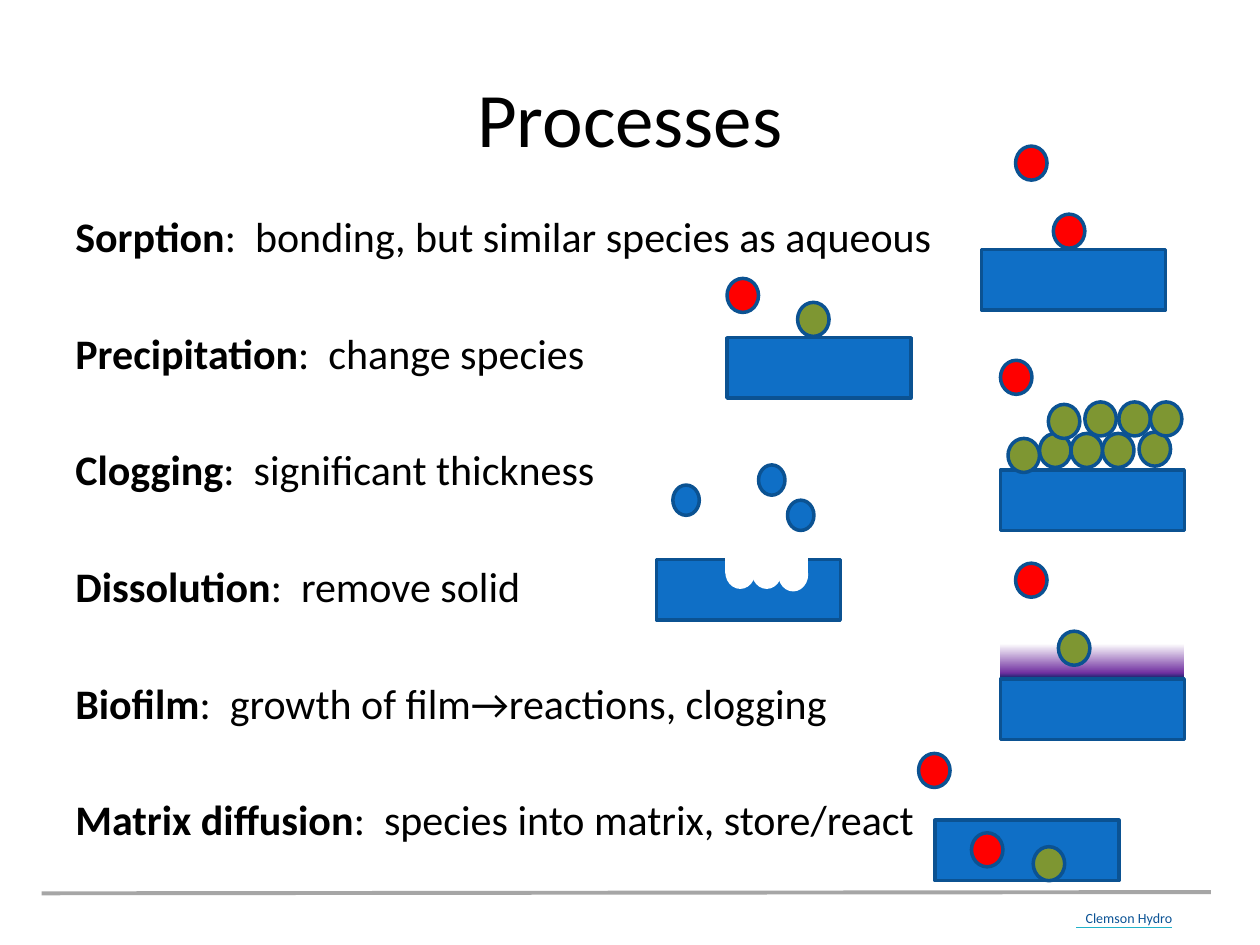
import copy

import pptx
import pptx.dml.color
import pptx.enum.shapes
import pptx.enum.text
import pptx.oxml.ns
import pptx.oxml.xmlchemy
import pptx.util

Inches, Pt = pptx.util.Inches, pptx.util.Pt
RGB = pptx.dml.color.RGBColor
SHAPE = pptx.enum.shapes.MSO_SHAPE
ALIGN = pptx.enum.text.PP_ALIGN
ANCHOR = pptx.enum.text.MSO_ANCHOR

BLACK = RGB(0x00, 0x00, 0x00)
WHITE = RGB(0xFF, 0xFF, 0xFF)
RED = RGB(0xFF, 0x00, 0x00)
GREEN = RGB(0x7E, 0x96, 0x32)
BLUE = RGB(0x0F, 0x6F, 0xC6)
OUTLINE = RGB(0x0B, 0x52, 0x92)
FOOTER = RGB(0x0B, 0x53, 0x95)
GRAY = RGB(0xA6, 0xA6, 0xA6)
TEAL = RGB(0x21, 0xB2, 0xC9)
FILM_STOPS = [(0.03, WHITE), (0.83, RGB(0x70, 0x30, 0xA0)), (1, RGB(0x00, 0x20, 0x60))]

BLOCK = (1.46, 0.48)
SPECIES = (0.25, 0.27)
GRAIN = (0.21, 0.24)
NOTCH = (0.63, 0.16)
FILM_HEIGHT = 0.29

# Each block is placed on the slide; its particles are offset from the block's corner.
PROCESSES = [
    {"term": "Sorption", "meaning": "bonding, but similar species as aqueous",
     "block": (7.79, 1.98),
     "particles": [(RED, SPECIES, [(0.27, -0.82), (0.57, -0.28)])]},
    {"term": "Precipitation", "meaning": "change species",
     "block": (5.77, 2.68),
     "particles": [(RED, SPECIES, [(0, -0.47)]), (GREEN, SPECIES, [(0.56, -0.28)])]},
    {"term": "Clogging", "meaning": "significant thickness",
     "block": (7.94, 3.73),
     "particles": [
         (GREEN, SPECIES, [(0.56, -0.29), (0.31, -0.29), (0.81, -0.29), (1.1, -0.3),
                           (0.06, -0.25), (0.94, -0.54), (0.67, -0.54), (0.38, -0.52),
                           (1.19, -0.54)]),
         (RED, SPECIES, [(0, -0.87)])]},
    {"term": "Dissolution", "meaning": "remove solid",
     "block": (5.21, 4.44), "notch": (0.56, -0.06),
     "particles": [(BLUE, GRAIN, [(0.13, -0.59), (0.81, -0.75), (1.04, -0.47)]),
                   (WHITE, GRAIN, [(0.98, 0), (0.77, -0.02), (0.56, -0.02)])]},
    {"term": "Biofilm", "meaning": "growth of film→reactions, clogging",
     "block": (7.94, 5.39), "film": True,
     "particles": [(RED, SPECIES, [(0.12, -0.92)]), (GREEN, SPECIES, [(0.46, -0.38)])]},
    {"term": "Matrix diffusion", "meaning": "species into matrix, store/react",
     "block": (7.42, 6.51),
     "particles": [(RED, SPECIES, [(-0.13, -0.53), (0.29, 0.1)]),
                   (GREEN, SPECIES, [(0.78, 0.21)])]},
]


def add_text(s, box, paragraphs, size, color, align, gap=0, **frame):
    """Each paragraph is a list of (text, bold) runs; gap is the points between paragraphs."""
    tf = s.shapes.add_textbox(*map(Inches, box)).text_frame
    for name, value in {"word_wrap": True, **frame}.items():
        setattr(tf, name, value)
    for i, runs in enumerate(paragraphs):
        p = tf.add_paragraph() if i else tf.paragraphs[0]
        p.alignment = align
        if i:
            p.space_before = Pt(gap)
        for text, bold in runs:
            r = p.add_run()
            r.text = text
            for name, value in {"name": "Calibri", "size": Pt(size), "bold": bold}.items():
                setattr(r.font, name, value)
            r.font.color.rgb = color


def add_line(s, start, end, color, width):
    line = s.shapes.add_connector(pptx.enum.shapes.MSO_CONNECTOR.STRAIGHT,
                                  *map(Inches, start + end))
    line.line.color.rgb = color
    line.line.width = Pt(width)
    line._element.spPr.append(pptx.oxml.xmlchemy.OxmlElement("a:effectLst"))


def add_solid(s, kind, corner, offset, size, color):
    left, top = (c + o for c, o in zip(corner, offset))
    sp = s.shapes.add_shape(kind, *map(Inches, (left, top) + size))
    sp.shadow.inherit = False
    sp.fill.solid()
    sp.fill.fore_color.rgb = color
    sp.line.color.rgb = WHITE if color == WHITE else OUTLINE
    sp.line.width = Pt(2)
    return sp


def add_film(s, corner):
    sp = add_solid(s, SHAPE.RECTANGLE, corner, (0, -FILM_HEIGHT), (BLOCK[0], FILM_HEIGHT), WHITE)
    sp.line.fill.background()
    sp.fill.gradient()
    sp.fill.gradient_angle = 270
    stops = sp._element.spPr.find(".//" + pptx.oxml.ns.qn("a:gsLst"))
    stops.append(copy.deepcopy(stops[0]))
    for stop, (position, color) in zip(sp.fill.gradient_stops, FILM_STOPS):
        stop.position = position
        stop.color.rgb = color


def add_scene(s, process):
    corner = process["block"]
    if "film" in process:
        add_film(s, corner)
    add_solid(s, SHAPE.RECTANGLE, corner, (0, 0), BLOCK, BLUE)
    for color, size, offsets in process["particles"]:
        for offset in offsets:
            add_solid(s, SHAPE.OVAL, corner, offset, size, color)
    if "notch" in process:
        add_solid(s, SHAPE.RECTANGLE, corner, process["notch"], NOTCH, WHITE)


def main():
    prs = pptx.Presentation()
    prs.slide_width, prs.slide_height = Inches(10), Inches(7.5)
    s = prs.slides.add_slide(prs.slide_layouts[6])

    add_line(s, (0.33, 7.09), (9.61, 7.08), GRAY, 2.25)
    add_text(s, (8.5, 7.17, 0.92, 0.24), [[("Clemson Hydro", False)]], 8, FOOTER,
             ALIGN.CENTER, word_wrap=False)
    add_line(s, (8.54, 7.36), (9.3, 7.36), TEAL, 0.75)

    add_text(s, (0.5, 0.3, 9, 1.25), [[("Processes", False)]], 44, BLACK,
             ALIGN.CENTER, vertical_anchor=ANCHOR.MIDDLE)
    definitions = [[(p["term"], True), (":  " + p["meaning"], False)] for p in PROCESSES]
    add_text(s, (0.5, 1.62, 9.5, 4.95), definitions, 24, BLACK, ALIGN.LEFT, gap=37.9)

    for process in PROCESSES:
        add_scene(s, process)
    prs.save("out.pptx")


if __name__ == "__main__":
    main()
